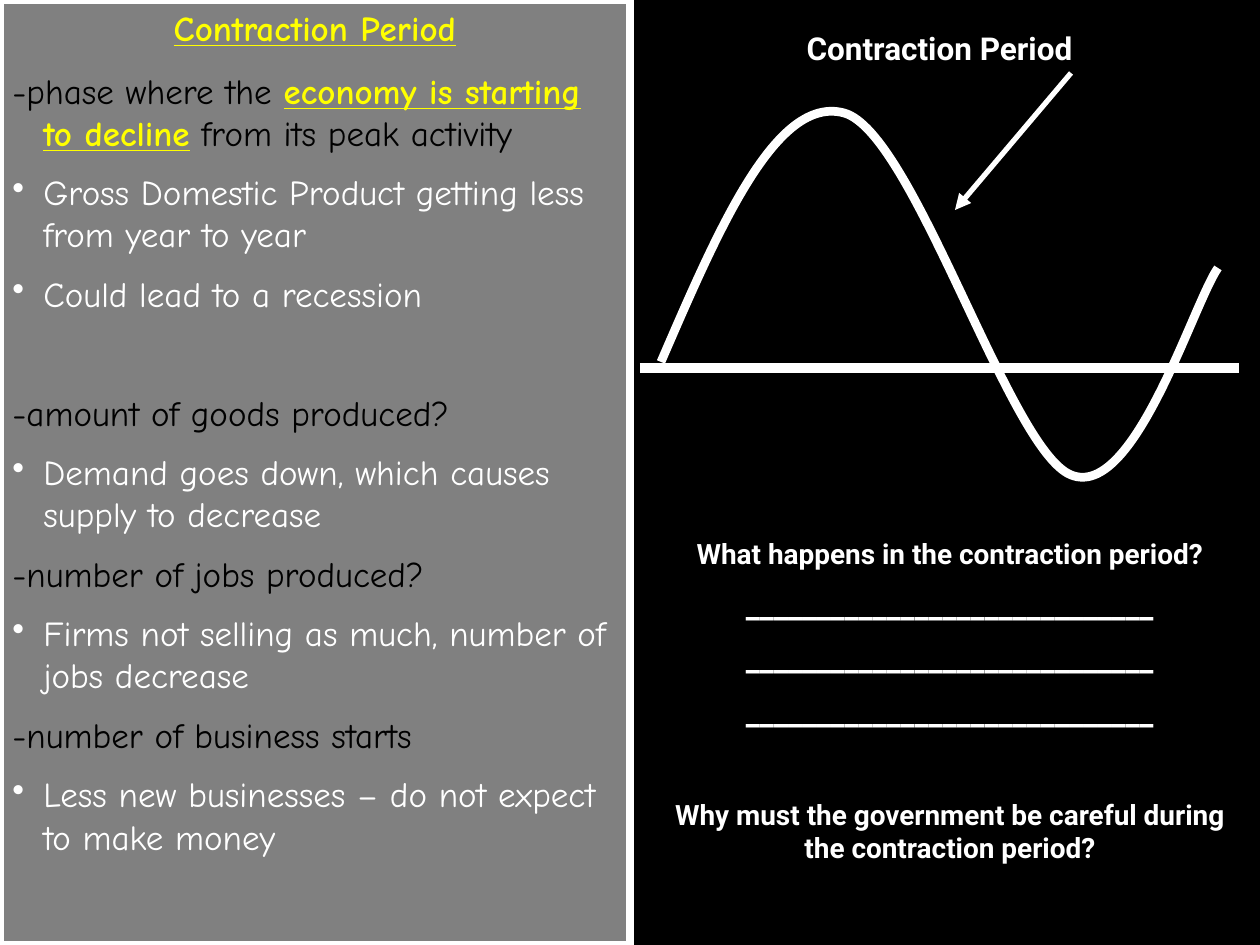
from dataclasses import dataclass
from lxml.etree import SubElement
from pptx import Presentation
from pptx.dml.color import RGBColor
from pptx.enum.shapes import MSO_CONNECTOR, MSO_SHAPE
from pptx.enum.text import PP_ALIGN
from pptx.oxml.ns import qn
from pptx.util import Emu, Pt


@dataclass(frozen=True)
class Theme:
    black: RGBColor = RGBColor(0, 0, 0)
    white: RGBColor = RGBColor(255, 255, 255)
    gray: RGBColor = RGBColor(128, 128, 128)
    yellow: RGBColor = RGBColor(255, 255, 0)
    hand: str = "Comic Neue"
    sans: str = "Roboto"
    notes: int = 20
    label: int = 18
    question: int = 16


THEME = Theme()
SCALE = 914400 / 126
INDENT = 31
BLANK_LINE = 34

NOTES = [
    ("Gross Domestic Product getting less from year to year", True, 0),
    ("Could lead to a recession", True, 0),
    ("-amount of goods produced?", False, BLANK_LINE),
    ("Demand goes down, which causes supply to decrease", True, 0),
    ("-number of jobs produced?", False, 0),
    ("Firms not selling as much, number of jobs decrease", True, 0),
    ("-number of business starts", False, 0),
    ("Less new businesses – do not expect to make money", True, 0),
]

CYCLE = [
    (661, 362), (719, 228), (776, 95), (844, 113), (914, 132),
    (1009, 450), (1071, 475), (1134, 501), (1193, 304), (1218, 268),
]


def px(n):
    return Emu(round(n * SCALE))


def add_text_frame(s, x, y, w, h):
    tf = s.shapes.add_textbox(px(x), px(y), px(w), px(h)).text_frame
    tf.word_wrap = True
    return tf


def add_paragraph(tf, text, font, size, color, extra=0, align=None, bold=False):
    first = not tf.paragraphs[0].runs
    p = tf.paragraphs[0] if first else tf.add_paragraph()
    p.add_run().text = text
    p.alignment = align
    p.space_before = Pt(0 if first else size / 2 + extra)
    p.font.name, p.font.size, p.font.bold = font, Pt(size), bold
    p.font.color.rgb = color
    return p


def add_note(tf, text, bullet=False, extra=0):
    color = THEME.white if bullet else THEME.black
    p = add_paragraph(tf, text, THEME.hand, THEME.notes, color, extra)
    pPr = p._p.get_or_add_pPr()
    pPr.set("marL", str(px(INDENT)))
    pPr.set("indent", str(-px(INDENT)))
    if bullet:
        bu = pPr.makeelement(qn("a:buChar"), {"char": "•"})
        pPr.find(qn("a:defRPr")).addprevious(bu)
    return p


def highlight(font):
    font.bold = font.underline = True
    font.color.rgb = THEME.yellow


def add_centered(tf, text, size, extra=0):
    add_paragraph(tf, text, THEME.sans, size, THEME.white, extra, PP_ALIGN.CENTER, True)


def add_panel(s, x, y, w, h):
    sp = s.shapes.add_shape(MSO_SHAPE.RECTANGLE, px(x), px(y), px(w), px(h))
    sp.shadow.inherit = False
    sp.fill.solid()
    sp.fill.fore_color.rgb = THEME.gray
    sp.line.color.rgb = THEME.white
    sp.line.width = Pt(4.5)


def add_curve(s, points, width):
    builder = s.shapes.build_freeform(*points[0], scale=SCALE)
    builder.add_line_segments(points[1:], close=False)
    sp = builder.convert_to_shape()
    sp.shadow.inherit = False
    sp.fill.background()
    sp.line.color.rgb = THEME.white
    sp.line.width = Pt(width)
    path = next(sp._element.iter(qn("a:path")))
    segments = path.findall(qn("a:lnTo"))
    for i in range(0, len(segments), 3):
        bezier = SubElement(path, qn("a:cubicBezTo"))
        for segment in segments[i:i + 3]:
            bezier.append(segment[0])
            path.remove(segment)


def add_line(s, x1, y1, x2, y2, width, arrow=False):
    line = s.shapes.add_connector(MSO_CONNECTOR.STRAIGHT, px(x1), px(y1), px(x2), px(y2))
    line.line.color.rgb = THEME.white
    line.line.width = Pt(width)
    if arrow:
        SubElement(line.line._get_or_add_ln(), qn("a:tailEnd"), type="triangle")
    SubElement(line._element.spPr, qn("a:effectLst"))


def add_notes(s):
    add_panel(s, 0, 0, 630, 945)
    tf = add_text_frame(s, 0, 0, 630, 54)
    p = add_paragraph(tf, "Contraction Period", THEME.hand, THEME.notes,
                      THEME.yellow, align=PP_ALIGN.CENTER)
    highlight(p.font)
    tf = add_text_frame(s, 0, 63, 630, 873)
    p = add_note(tf, "-phase where the ")
    r = p.add_run()
    r.text = "economy is starting to decline"
    highlight(r.font)
    p.add_run().text = " from its peak activity"
    for text, bullet, extra in NOTES:
        add_note(tf, text, bullet, extra)


def add_questions(s):
    tf = add_text_frame(s, 640, 530, 620, 358)
    add_centered(tf, "What happens in the contraction period?", THEME.question)
    for _ in range(3):
        add_centered(tf, "_" * 29, THEME.label)
    add_centered(tf, "Why must the government be careful during the contraction period?",
                 THEME.question, extra=30)


def add_cycle(s):
    tf = add_text_frame(s, 672, 23, 535, 50)
    add_centered(tf, "Contraction Period", THEME.label)
    add_curve(s, CYCLE, 5)
    add_line(s, 640, 368, 1239, 368, 6)
    add_line(s, 1071, 73, 955, 210, 3, arrow=True)


def main():
    prs = Presentation()
    prs.slide_width, prs.slide_height = px(1260), px(945)
    s = prs.slides.add_slide(prs.slide_layouts[6])
    s.background.fill.solid()
    s.background.fill.fore_color.rgb = THEME.black
    add_notes(s)
    add_questions(s)
    add_cycle(s)
    prs.save("out.pptx")


if __name__ == "__main__":
    main()
